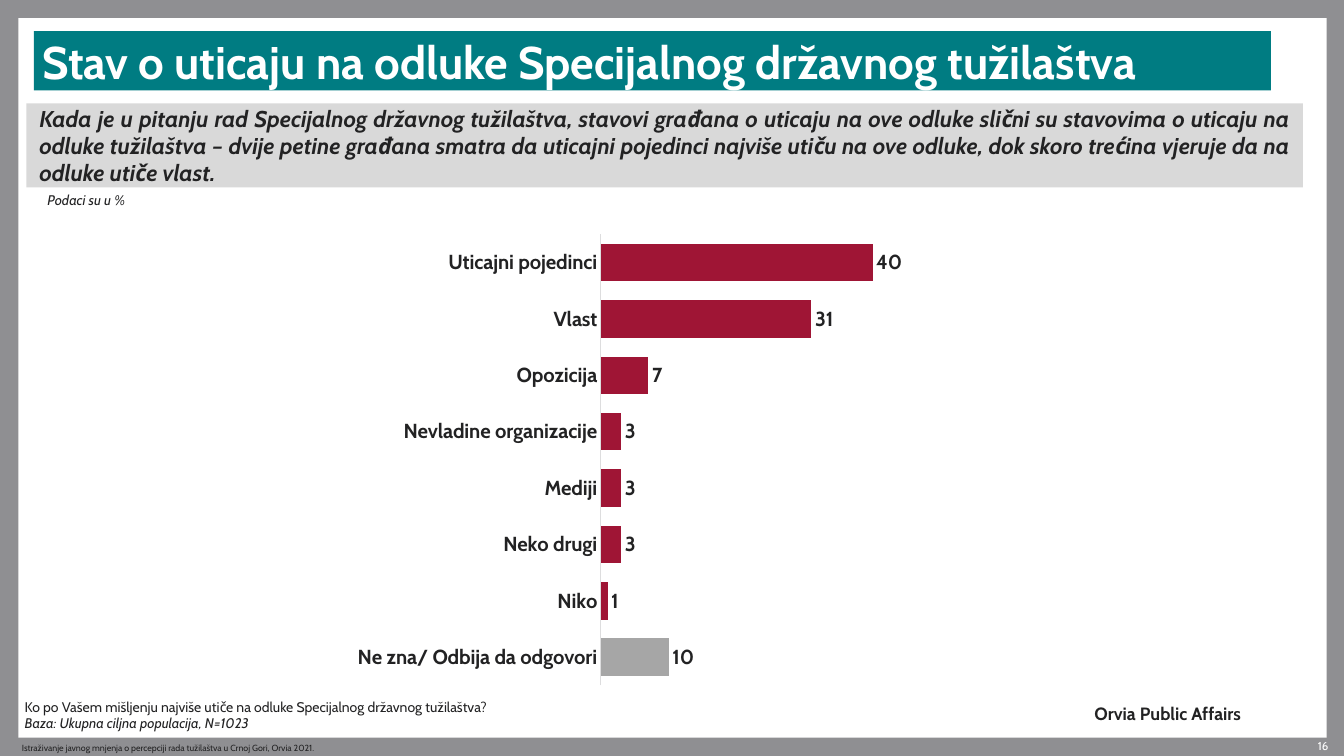
from lxml import etree
from pptx import Presentation
from pptx import util as u
from pptx.chart.data import CategoryChartData
from pptx.dml.color import RGBColor
from pptx.enum import chart as ch, shapes, text
from pptx.oxml.ns import qn

PX = 9144  # 100 px to the inch
FONT = "Cabin"
COLORS = {
    "frame": "8F8F92",
    "white": "FFFFFF",
    "teal": "007C82",
    "band": "D9D9D9",
    "ink": "222223",
    "axis": "DDDDDE",
    "bar": "9F1535",
    "no_answer": "A6A6A6",
}
ANSWERS = [
    ("Uticajni pojedinci", 40),
    ("Vlast", 31),
    ("Opozicija", 7),
    ("Nevladine organizacije", 3),
    ("Mediji", 3),
    ("Neko drugi", 3),
    ("Niko", 1),
    ("Ne zna/ Odbija da odgovori", 10),
]
LEFT, RIGHT, JUSTIFY = text.PP_ALIGN.LEFT, text.PP_ALIGN.RIGHT, text.PP_ALIGN.JUSTIFY
TOP, MIDDLE = text.MSO_ANCHOR.TOP, text.MSO_ANCHOR.MIDDLE


def color(name):
    return RGBColor.from_string(COLORS[name])


def emu(box):
    return [u.Emu(v * PX) for v in box]


def style(font, size, ink="ink", bold=False, italic=False):
    font.name, font.size = FONT, u.Pt(size)
    font.bold, font.italic = bold, italic
    font.color.rgb = color(ink)


def add_panel(slide, box, fill):
    sp = slide.shapes.add_shape(shapes.MSO_SHAPE.RECTANGLE, *emu(box))
    sp.shadow.inherit = False
    sp.fill.solid()
    sp.fill.fore_color.rgb = color(fill)
    sp.line.fill.background()
    return sp


def write(sp, lines, size, inset=(0, 0), anchor=TOP, align=LEFT, ink="ink", bold=False):
    """Fill a shape with (words, italic) lines."""
    tf = sp.text_frame
    tf.word_wrap, tf.vertical_anchor = True, anchor
    tf.margin_left = tf.margin_right = u.Emu(inset[0] * PX)
    tf.margin_top = tf.margin_bottom = u.Emu(inset[1] * PX)
    for i, (words, italic) in enumerate(lines):
        p = tf.add_paragraph() if i else tf.paragraphs[0]
        p.alignment = align
        r = p.add_run()
        r.text = words
        style(r.font, size, ink, bold, italic)


def add_label(slide, box, lines, size, **options):
    write(slide.shapes.add_textbox(*emu(box)), lines, size, **options)


def add_page_frame(slide, box):
    """White page on a grey frame, with the footer and page number."""
    x, y, w, h = box
    slide.background.fill.solid()
    slide.background.fill.fore_color.rgb = color("frame")
    add_panel(slide, (x + 20, y + 20, w - 39, h - 40), "white")
    footer = y + h - 18
    add_label(slide, (x + w - 64, footer, 47, 17), [("16", False)], 9,
              align=RIGHT, ink="white")
    add_label(slide, (x + w - 273, footer - 40, 209, 24),
              [("Orvia Public Affairs", False)], 14, bold=True)
    add_label(slide, (x + 24, footer, 486, 18),
              [("Istraživanje javnog mnjenja o percepciji rada tužilaštva "
                "u Crnoj Gori, Orvia 2021.", False)], 7, anchor=MIDDLE)


def add_heading(slide, box):
    """Title bar, summary band and unit note."""
    x, y, w, h = box
    title = add_panel(slide, (x + 8, y, w - 43, 65), "teal")
    write(title, [("Stav o uticaju na odluke Specijalnog državnog tužilaštva", False)],
          36, inset=(9, 2), anchor=MIDDLE, ink="white", bold=True)
    summary = add_panel(slide, (x, y + 79, w, 92), "band")
    write(summary, [(
        "Kada je u pitanju rad Specijalnog državnog tužilaštva, stavovi građana "
        "o uticaju na ove odluke slični su stavovima o uticaju na odluke tužilaštva "
        "– dvije petine građana smatra da uticajni pojedinci najviše utiču na ove "
        "odluke, dok skoro trećina vjeruje da na odluke utiče vlast.", True)],
        18, inset=(14, 0), anchor=MIDDLE, align=JUSTIFY, bold=True)
    add_label(slide, (x + 13, y + h - 29, 134, 29), [("Podaci su u %", True)], 11,
              inset=(10, 5))


def place_plot(chart, **fractions):
    """Fix the inner plot area as fractions of the chart."""
    area = chart._chartSpace.chart.plotArea
    for old in area.findall(qn("c:layout")):
        area.remove(old)
    layout = etree.Element(qn("c:layout"))
    manual = etree.SubElement(layout, qn("c:manualLayout"))
    settings = {"layoutTarget": "inner", "xMode": "edge", "yMode": "edge", **fractions}
    for tag, value in settings.items():
        etree.SubElement(manual, qn("c:" + tag)).set("val", str(value))
    area.insert(0, layout)


def add_answer_chart(slide, box):
    data = CategoryChartData()
    data.categories = [name for name, _ in ANSWERS]
    data.add_series("Series 1", [value for _, value in ANSWERS])
    chart = slide.shapes.add_chart(ch.XL_CHART_TYPE.BAR_CLUSTERED, *emu(box), data).chart
    chart.has_title = chart.has_legend = False
    style(chart.font, 16, bold=True)

    names = chart.category_axis
    names.reverse_order = True
    names.has_major_gridlines = False
    names.major_tick_mark = names.minor_tick_mark = ch.XL_TICK_MARK.NONE
    names.format.line.color.rgb = color("axis")
    names.format.line.width = u.Pt(0.75)
    style(names.tick_labels.font, 16, bold=True)

    values = chart.value_axis
    values.visible = values.has_major_gridlines = False
    values.minimum_scale, values.maximum_scale = 0, 44.7

    plot = chart.plots[0]
    plot.gap_width, plot.vary_by_categories = 50, False
    series = plot.series[0]
    series.invert_if_negative = False
    last = series.points[len(ANSWERS) - 1]
    for part, fill in ((series, "bar"), (last, "no_answer")):
        part.format.fill.solid()
        part.format.fill.fore_color.rgb = color(fill)

    labels = series.data_labels
    labels.show_value = True
    labels.position = ch.XL_LABEL_POSITION.OUTSIDE_END
    labels.number_format, labels.number_format_is_linked = r"#,##0;\-#,##0", False
    style(labels.font, 16, bold=True)
    place_plot(chart, x=0.55, y=0.03, w=0.44, h=0.96)


def add_question(slide, box):
    add_label(slide, box, [
        ("Ko po Vašem mišljenju najviše utiče na odluke Specijalnog državnog tužilaštva?",
         False),
        ("Baza: Ukupna ciljna populacija, N=1023", True),
    ], 11, anchor=MIDDLE)


def main():
    prs = Presentation()
    prs.slide_width, prs.slide_height = emu((1470, 827))
    slide = prs.slides.add_slide(prs.slide_layouts[6])
    add_page_frame(slide, (0, 0, 1470, 827))
    add_heading(slide, (29, 34, 1396, 200))
    add_answer_chart(slide, (242, 241, 755, 514))
    add_question(slide, (27, 763, 658, 38))
    prs.save("out.pptx")


if __name__ == "__main__":
    main()
